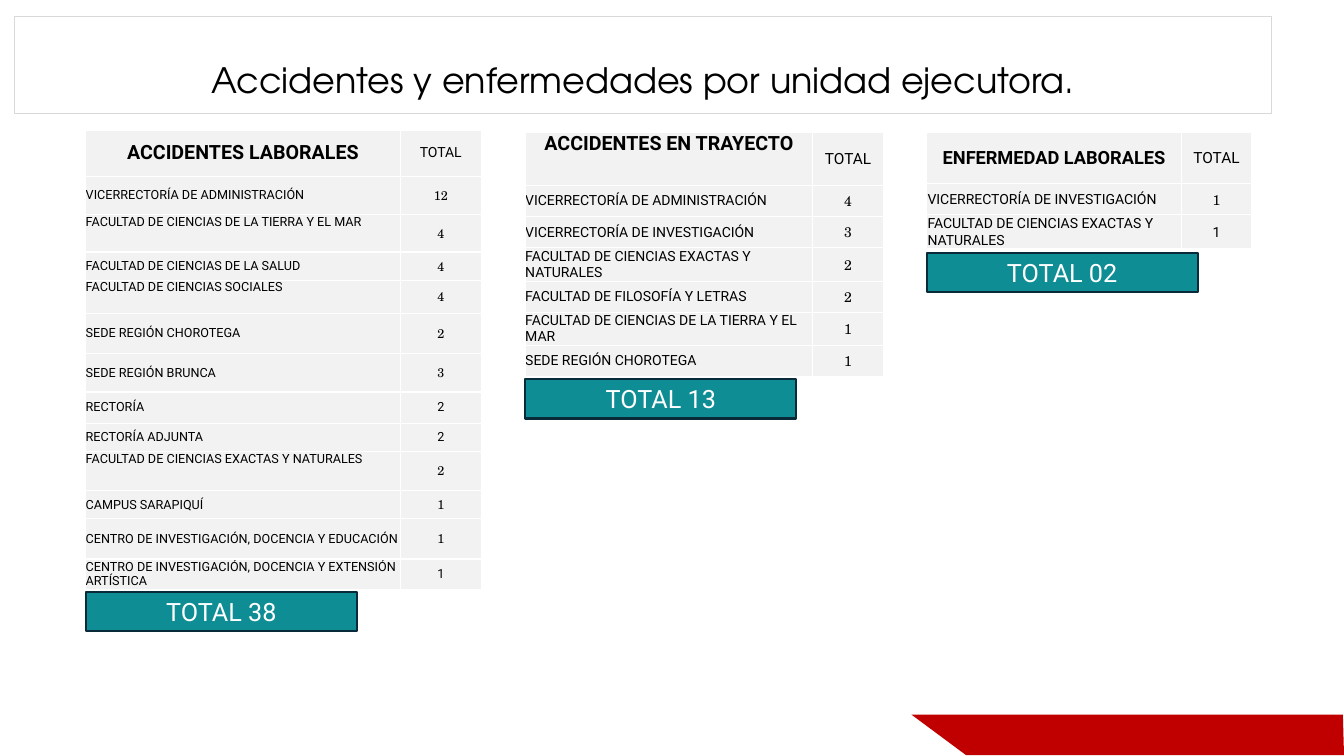
"""Build the slide of accidents and illnesses by executing unit."""
from dataclasses import dataclass

from lxml.etree import SubElement
from pptx import Presentation
from pptx.dml.color import RGBColor
from pptx.enum.shapes import MSO_SHAPE
from pptx.enum.text import MSO_ANCHOR as Anchor, MSO_AUTO_SIZE as AutoSize, PP_ALIGN as Align
from pptx.oxml import parse_xml
from pptx.oxml.ns import nsdecls, qn
from pptx.slide import Slide
from pptx.table import _Cell as Cell
from pptx.text.text import TextFrame
from pptx.util import Inches, Pt

SLIDE_WIDTH, SLIDE_HEIGHT = Inches(13.33), Inches(7.5)

BLACK = RGBColor(0x00, 0x00, 0x00)
WHITE = RGBColor(0xFF, 0xFF, 0xFF)
CELL_GREY = RGBColor(0xF2, 0xF2, 0xF2)
FRAME_GREY = RGBColor(0xD9, 0xD9, 0xD9)
TEAL = RGBColor(0x0E, 0x8D, 0x94)
NAVY = RGBColor(0x09, 0x2A, 0x39)
RED = RGBColor(0xC0, 0x00, 0x00)

SANS, SERIF, TITLE_FONT = "Roboto", "TeX Gyre Schola", "TeX Gyre Adventor"


@dataclass(frozen=True)
class Unit:
    """One table row; its height is a percentage of the slide."""
    name: str
    count: str
    height: float
    count_font: str = SERIF
    anchor: Anchor = Anchor.MIDDLE


@dataclass(frozen=True)
class Category:
    """One table with its total; lengths are percentages of the slide."""
    heading: Unit
    units: tuple[Unit, ...]
    total: str
    left: float
    top: float
    columns: tuple[float, float]
    heading_size: int
    count_heading_size: int
    body_size: int
    inset: float = 0
    total_gap: float = 0.3


CATEGORIES = (
    Category(
        Unit("ACCIDENTES LABORALES", "TOTAL", 6.13, SANS),
        (
            Unit("VICERRECTORÍA DE ADMINISTRACIÓN", "12", 5.07),
            Unit("FACULTAD DE CIENCIAS DE LA TIERRA Y EL MAR", "4", 4.93, anchor=Anchor.TOP),
            Unit("FACULTAD DE CIENCIAS DE LA SALUD", "4", 3.73),
            Unit("FACULTAD DE CIENCIAS SOCIALES", "4", 4.4, anchor=Anchor.TOP),
            Unit("SEDE REGIÓN CHOROTEGA", "2", 5.33),
            Unit("SEDE REGIÓN BRUNCA", "3", 5.07),
            Unit("RECTORÍA", "2", 4.13, SANS),
            Unit("RECTORÍA ADJUNTA", "2", 3.73, SANS),
            Unit("FACULTAD DE CIENCIAS EXACTAS Y NATURALES", "2", 5.2, anchor=Anchor.TOP),
            Unit("CAMPUS SARAPIQUÍ", "1", 3.73),
            Unit("CENTRO DE INVESTIGACIÓN, DOCENCIA Y EDUCACIÓN", "1", 5.33),
            Unit("CENTRO DE INVESTIGACIÓN, DOCENCIA Y EXTENSIÓN ARTÍSTICA", "1", 4, SANS),
        ),
        "TOTAL 38", 6.38, 17.2, (23.4, 6.04), 14, 10, 9,
    ),
    Category(
        Unit("ACCIDENTES EN TRAYECTO", "TOTAL", 7.07, SANS, Anchor.TOP),
        (
            Unit("VICERRECTORÍA DE ADMINISTRACIÓN", "4", 4.13),
            Unit("VICERRECTORÍA DE INVESTIGACIÓN", "3", 4.13),
            Unit("FACULTAD DE CIENCIAS EXACTAS Y NATURALES", "2", 4.4),
            Unit("FACULTAD DE FILOSOFÍA Y LETRAS", "2", 4.13),
            Unit("FACULTAD DE CIENCIAS DE LA TIERRA Y EL MAR", "1", 4.4),
            Unit("SEDE REGIÓN CHOROTEGA", "1", 4.13),
        ),
        "TOTAL 13", 39.08, 17.47, (21.4, 5.25), 14, 11, 10,
    ),
    Category(
        Unit("ENFERMEDAD LABORALES", "TOTAL", 6.8, SANS),
        (
            Unit("VICERRECTORÍA DE INVESTIGACIÓN", "1", 4.13),
            Unit("FACULTAD DE CIENCIAS EXACTAS Y NATURALES", "1", 4.53, SANS),
        ),
        "TOTAL 02", 68.94, 17.47, (18.95, 5.25), 13, 11, 10, 0.01, 0.5,
    ),
)
TOTAL_WIDTH, TOTAL_HEIGHT = 20.18, 5.2
FOOTER_CORNERS = ((67.82, 94.53), (71.87, 99.87), (100, 99.87), (99.92, 94.53))


def across(percent: float) -> int:
    """Convert a percentage of the slide's width."""
    return round(SLIDE_WIDTH * percent / 100)


def down(percent: float) -> int:
    """Convert a percentage of the slide's height."""
    return round(SLIDE_HEIGHT * percent / 100)


def write(frame: TextFrame, text: str, size: int, font: str, color: RGBColor,
          align: Align = Align.CENTER, bold: bool = False) -> None:
    """Write one formatted run in the first paragraph."""
    paragraph = frame.paragraphs[0]
    paragraph.alignment = align
    run = paragraph.add_run()
    run.text = text
    run.font.size, run.font.name, run.font.bold = Pt(size), font, bold
    run.font.color.rgb = color


def format_cell(cell: Cell, anchor: Anchor, inset: float) -> None:
    """Set the fill, white borders, margins and anchor of a cell."""
    cell.fill.solid()
    cell.fill.fore_color.rgb = CELL_GREY
    cell.vertical_anchor = anchor
    cell.margin_left = cell.margin_right = cell.margin_top = Inches(inset)
    cell.margin_bottom = 0
    properties = cell._tc.get_or_add_tcPr()
    for position, side in enumerate(("lnL", "lnR", "lnT", "lnB")):
        border = parse_xml(f'<a:{side} {nsdecls("a")} w="{Pt(1)}"/>')
        fill = SubElement(border, qn("a:solidFill"))
        SubElement(fill, qn("a:srgbClr"), val=str(WHITE))
        properties.insert(position, border)


def add_category(slide: Slide, category: Category) -> None:
    """Draw a category's table and the total below it."""
    rows = (category.heading, *category.units)
    height = sum(unit.height for unit in rows)
    table = slide.shapes.add_table(
        len(rows), 2, across(category.left), down(category.top),
        across(sum(category.columns)), down(height)).table
    table.first_row = table.horz_banding = False
    for column, width in zip(table.columns, category.columns):
        column.width = across(width)
    for index, unit in enumerate(rows):
        table.rows[index].height = down(unit.height)
        heading = unit is category.heading
        name, count = table.cell(index, 0), table.cell(index, 1)
        format_cell(name, unit.anchor, category.inset)
        format_cell(count, Anchor.MIDDLE, category.inset)
        write(name.text_frame, unit.name,
              category.heading_size if heading else category.body_size, SANS, BLACK,
              Align.CENTER if heading else Align.LEFT, heading)
        write(count.text_frame, unit.count,
              category.count_heading_size if heading else category.body_size,
              unit.count_font, BLACK)

    total = slide.shapes.add_shape(
        MSO_SHAPE.RECTANGLE, across(category.left),
        down(category.top + height + category.total_gap),
        across(TOTAL_WIDTH), down(TOTAL_HEIGHT))
    total.shadow.inherit = False
    total.fill.solid()
    total.fill.fore_color.rgb = TEAL
    total.line.color.rgb, total.line.width = NAVY, Pt(1.5)
    total.text_frame.vertical_anchor = Anchor.MIDDLE
    write(total.text_frame, category.total, 18, SANS, WHITE)


def add_footer(slide: Slide) -> None:
    """Draw the slanted red band at the bottom right."""
    start, *corners = ((across(x), down(y)) for x, y in FOOTER_CORNERS)
    builder = slide.shapes.build_freeform(*start)
    builder.add_line_segments(corners)
    band = builder.convert_to_shape()
    band.shadow.inherit = False
    band.fill.solid()
    band.fill.fore_color.rgb = RED
    band.line.fill.background()


def format_title(slide: Slide) -> None:
    """Place the title in its rounded frame."""
    title = slide.shapes.title
    title.left, title.top = across(1.05), down(2.13)
    title.width, title.height = across(93.55), down(12.93)
    title._element.spPr.append(
        parse_xml(f'<a:prstGeom {nsdecls("a")} prst="roundRect"><a:avLst/></a:prstGeom>'))
    title.fill.background()
    title.line.color.rgb, title.line.width = FRAME_GREY, Pt(0.75)
    frame = title.text_frame
    frame.auto_size, frame.word_wrap = AutoSize.NONE, True
    frame.vertical_anchor = Anchor.BOTTOM
    frame.margin_left = frame.margin_right = frame.margin_top = frame.margin_bottom = Inches(0.13)
    frame.paragraphs[0].line_spacing = 0.9
    write(frame, "Accidentes y enfermedades por unidad ejecutora.", 25, TITLE_FONT, BLACK)


def main() -> None:
    """Build and save the presentation."""
    deck = Presentation()
    deck.slide_width, deck.slide_height = SLIDE_WIDTH, SLIDE_HEIGHT
    slide = deck.slides.add_slide(deck.slide_layouts[5])
    add_footer(slide)
    format_title(slide)
    for category in CATEGORIES:
        add_category(slide, category)
    deck.save("out.pptx")


if __name__ == "__main__":
    main()
